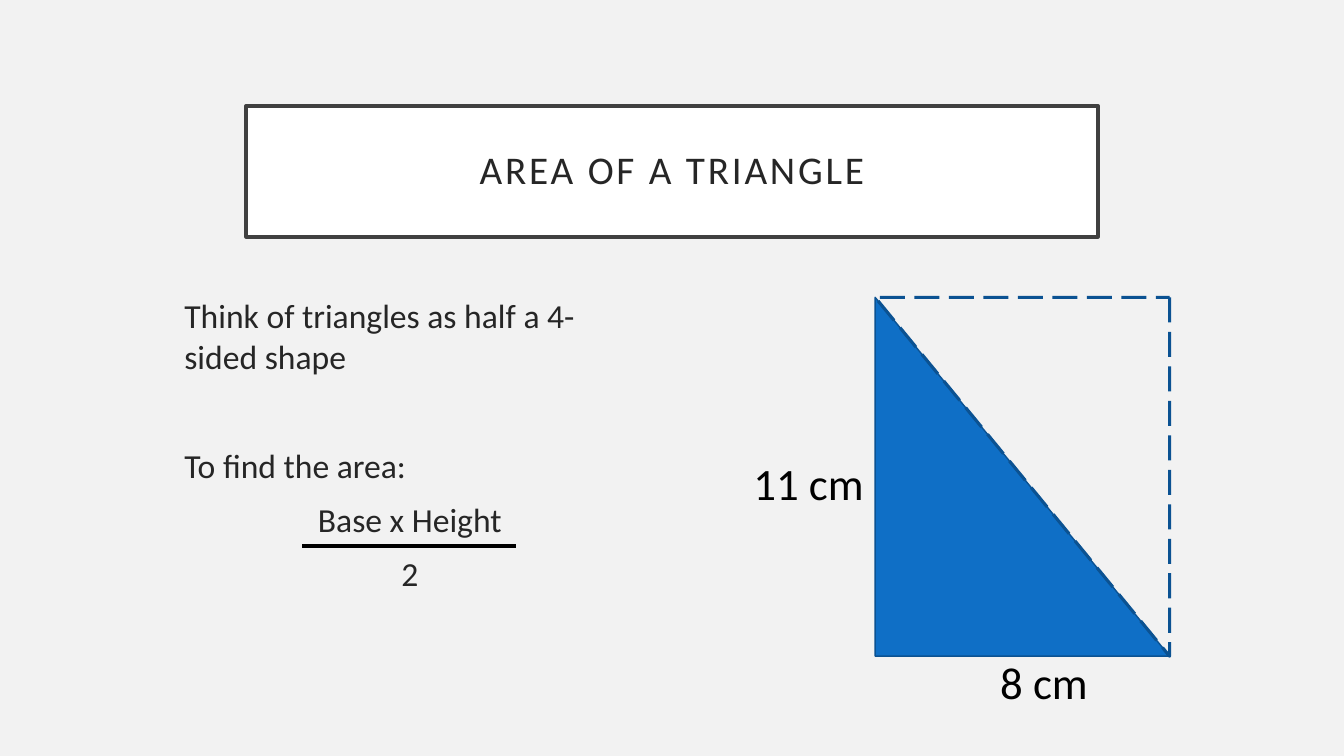
import dataclasses

import pptx
import pptx.dml.color
import pptx.enum.dml
import pptx.enum.shapes
import pptx.enum.text
import pptx.oxml.ns
import pptx.util
from lxml import etree

PX = 9144
SHAPE = pptx.enum.shapes.MSO_SHAPE
ALIGN = pptx.enum.text.PP_ALIGN


@dataclasses.dataclass(frozen=True)
class Theme:
    """Colours and type sizes of the slide."""
    font: str = "Calibri"
    back: str = "F2F2F2"
    white: str = "FFFFFF"
    frame: str = "404040"
    ink: str = "262626"
    black: str = "000000"
    blue: str = "0F6FC6"
    edge: str = "0B5292"
    title: int = 28
    body: int = 24
    label: int = 32


THEME = Theme()


def scale(*sizes):
    """Turn px into EMU."""
    return [pptx.util.Emu(size * PX) for size in sizes]


def tint(code):
    """Turn a hex code into a colour."""
    return pptx.dml.color.RGBColor.from_string(code)


def style(para, size, color, align):
    """Format a paragraph and its runs."""
    para.alignment = align
    for run in para.runs:
        run.font.name = THEME.font
        run.font.size = pptx.util.Pt(size)
        run.font.color.rgb = tint(color)


def draw(slide, kind, box, fill, edge, width):
    """Add a preset shape; a fill of None leaves it open."""
    shape = slide.shapes.add_shape(kind, *scale(*box))
    shape.shadow.inherit = False
    if fill:
        shape.fill.solid()
        shape.fill.fore_color.rgb = tint(fill)
    else:
        shape.fill.background()
    shape.line.color.rgb = tint(edge)
    shape.line.width = pptx.util.Pt(width)
    return shape


def add_title(slide, box, text):
    """Add the framed title."""
    shape = draw(slide, SHAPE.RECTANGLE, box, THEME.white, THEME.frame, 2.5)
    frame = shape.text_frame
    frame.word_wrap = True
    frame.vertical_anchor = pptx.enum.text.MSO_ANCHOR.MIDDLE
    frame.margin_left, frame.margin_right = scale(20, 20)
    frame.margin_top, frame.margin_bottom = scale(20, 20)
    para = frame.paragraphs[0]
    para.text = text
    para.line_spacing = 0.9
    style(para, THEME.title, THEME.ink, ALIGN.CENTER)
    para.runs[0].font._element.set("spc", "200")


def add_body(slide, box, lines):
    """Add the rule as text with its fraction bar."""
    left, top, width, height = box
    frame = slide.shapes.add_textbox(*scale(*box)).text_frame
    frame.word_wrap = True
    frame.text = "\n".join(text for text, gap, align in lines)
    for para, (text, gap, align) in zip(frame.paragraphs, lines):
        para.space_before = pptx.util.Pt(gap)
        style(para, THEME.body, THEME.ink, align)
    mid, half, level = left + width // 2, 106, top + 254
    bar = slide.shapes.add_connector(
        pptx.enum.shapes.MSO_CONNECTOR.STRAIGHT,
        *scale(mid - half, level, mid + half, level))
    bar.line.color.rgb = tint(THEME.black)
    bar.line.width = pptx.util.Pt(3)
    etree.SubElement(bar._element.spPr, pptx.oxml.ns.qn("a:effectLst"))


def add_label(slide, box, text):
    """Add the length of one side."""
    frame = slide.shapes.add_textbox(*scale(*box)).text_frame
    frame.word_wrap = False
    frame.auto_size = pptx.enum.text.MSO_AUTO_SIZE.SHAPE_TO_FIT_TEXT
    frame.text = text
    style(frame.paragraphs[0], THEME.label, THEME.black, ALIGN.CENTER)


def add_figure(slide, box, base, rise):
    """Add the triangle, its dashed twin and both lengths."""
    left, top, width, height = box
    solid = draw(slide, SHAPE.ISOSCELES_TRIANGLE, box,
                 THEME.blue, THEME.edge, 1)
    twin = draw(slide, SHAPE.ISOSCELES_TRIANGLE, box,
                None, THEME.edge, 2.25)
    for shape in (solid, twin):
        shape.adjustments[0] = 0
    twin.rotation = 180
    twin.line.dash_style = pptx.enum.dml.MSO_LINE.LONG_DASH
    add_label(slide, (left + 113, top + height - 6, 109, 64), base)
    add_label(slide, (left - 132, top + 152, 132, 64), rise)


def main():
    """Build and save the slide."""
    deck = pptx.Presentation()
    deck.slide_width, deck.slide_height = scale(1333, 750)
    slide = deck.slides.add_slide(deck.slide_layouts[6])
    slide.background.fill.solid()
    slide.background.fill.fore_color.rgb = tint(THEME.back)
    add_title(slide, (244, 105, 845, 130), "AREA OF A TRIANGLE")
    add_body(slide, (173, 288, 467, 339), [
        ("Think of triangles as half a 4-sided shape", 10, ALIGN.LEFT),
        ("To find the area:", 49, ALIGN.LEFT),
        ("Base x Height", 10, ALIGN.CENTER),
        ("2", 10, ALIGN.CENTER),
    ])
    add_figure(slide, (868, 295, 292, 356), "8 cm", "11 cm")
    deck.save("out.pptx")


if __name__ == "__main__":
    main()
